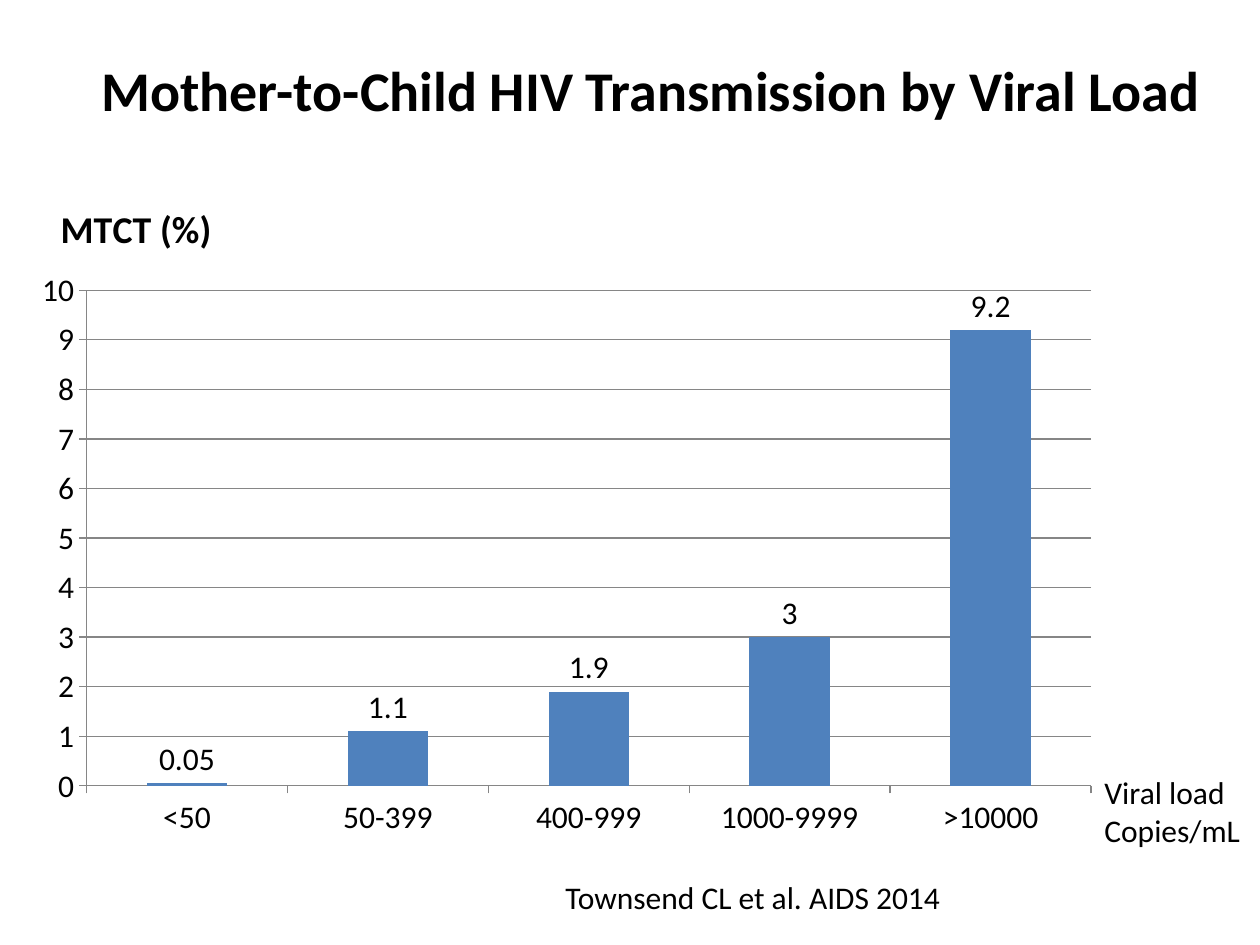
from pptx import Presentation
from pptx import util as u
from pptx.chart.data import CategoryChartData
from pptx.dml.color import RGBColor
from pptx.enum import chart as c
from pptx.enum import text
from pptx.oxml import parse_xml
from pptx.oxml.ns import nsdecls, qn

FONT = "Calibri"
BLACK, BLUE, GRAY = "000000", "4F81BD", "868686"
MTCT_BY_VIRAL_LOAD = {
    "<50": 0.05,
    "50-399": 1.1,
    "400-999": 1.9,
    "1000-9999": 3,
    ">10000": 9.2,
}


def color(hex_string):
    return RGBColor.from_string(hex_string)


def style_font(font, size, bold=False):
    font.name = FONT
    font.size = u.Pt(size)
    font.bold = bold
    font.color.rgb = color(BLACK)


def place(shape, left, top, width, height):
    shape.left, shape.top = u.Pt(left), u.Pt(top)
    shape.width, shape.height = u.Pt(width), u.Pt(height)


def set_title(slide, wording):
    title = slide.shapes.title
    place(title, 36, 12, 672, 78)
    frame = title.text_frame
    frame.text = wording
    frame.vertical_anchor = text.MSO_ANCHOR.MIDDLE
    paragraph = frame.paragraphs[0]
    paragraph.alignment = text.PP_ALIGN.CENTER
    style_font(paragraph.font, 32, bold=True)


def add_label(slide, lines, left, top, width, height):
    box = slide.shapes.add_textbox(u.Pt(left), u.Pt(top), u.Pt(width), u.Pt(height))
    frame = box.text_frame
    frame.word_wrap = False
    frame.auto_size = text.MSO_AUTO_SIZE.SHAPE_TO_FIT_TEXT
    frame.text = "\n".join(lines)
    for paragraph in frame.paragraphs:
        style_font(paragraph.font, 18)


def manual_layout(inner=False, **fractions):
    """Return a c:layout element; fractions x, y, w, h are of the chart's size."""
    target = '<c:layoutTarget val="inner"/>' if inner else ""
    modes = '<c:xMode val="edge"/><c:yMode val="edge"/>'
    values = "".join(f'<c:{key} val="{value}"/>' for key, value in fractions.items())
    return parse_xml(
        f'<c:layout {nsdecls("c")}><c:manualLayout>{target}{modes}{values}'
        "</c:manualLayout></c:layout>"
    )


def set_layout(parent, layout, index):
    for old in parent.findall(qn("c:layout")):
        parent.remove(old)
    parent.insert(index, layout)


def style_axis(axis):
    axis.major_tick_mark = c.XL_TICK_MARK.OUTSIDE
    axis.minor_tick_mark = c.XL_TICK_MARK.NONE
    axis.format.line.color.rgb = color(GRAY)
    axis.format.line.width = u.Pt(0.75)
    style_font(axis.tick_labels.font, 18)


def add_column_chart(slide):
    data = CategoryChartData()
    data.categories = list(MTCT_BY_VIRAL_LOAD)
    data.add_series("Series 1", list(MTCT_BY_VIRAL_LOAD.values()))
    chart = slide.shapes.add_chart(
        c.XL_CHART_TYPE.COLUMN_CLUSTERED,
        u.Pt(12), u.Pt(96), u.Pt(624), u.Pt(388), data,
    ).chart
    style_font(chart.font, 18)
    chart.has_legend = False

    chart.has_title = True
    title = chart.chart_title
    title.text_frame.text = "MTCT (%)"
    style_font(title.text_frame.paragraphs[0].font, 21.6, bold=True)
    title.include_in_layout = False
    set_layout(title.element, manual_layout(x=0.03, y=0.04), 1)
    plot_area = chart.element.find(".//" + qn("c:plotArea"))
    set_layout(plot_area, manual_layout(inner=True, x=0.06, y=0.18, w=0.92, h=0.73), 0)

    style_axis(chart.category_axis)
    value_axis = chart.value_axis
    style_axis(value_axis)
    value_axis.minimum_scale, value_axis.maximum_scale = 0, 10
    value_axis.major_unit = 1
    value_axis.has_major_gridlines = True
    gridline = value_axis.major_gridlines.format.line
    gridline.color.rgb = color(GRAY)
    gridline.width = u.Pt(0.75)

    plot = chart.plots[0]
    plot.gap_width = 150
    plot.vary_by_categories = False
    series = plot.series[0]
    series.format.fill.solid()
    series.format.fill.fore_color.rgb = color(BLUE)
    labels = series.data_labels
    labels.show_value = True
    labels.position = c.XL_LABEL_POSITION.OUTSIDE_END
    style_font(labels.font, 18)


def main():
    presentation = Presentation()
    presentation.slide_width, presentation.slide_height = u.Pt(720), u.Pt(540)
    slide = presentation.slides.add_slide(presentation.slide_layouts[5])
    set_title(slide, "Mother-to-Child HIV Transmission by Viral Load")
    add_column_chart(slide)
    add_label(slide, ["Viral load", "Copies/mL"], 624, 438, 101.5, 51)
    add_label(slide, ["Townsend CL et al. AIDS 2014"], 316, 498, 260, 29)
    presentation.save("out.pptx")


if __name__ == "__main__":
    main()
